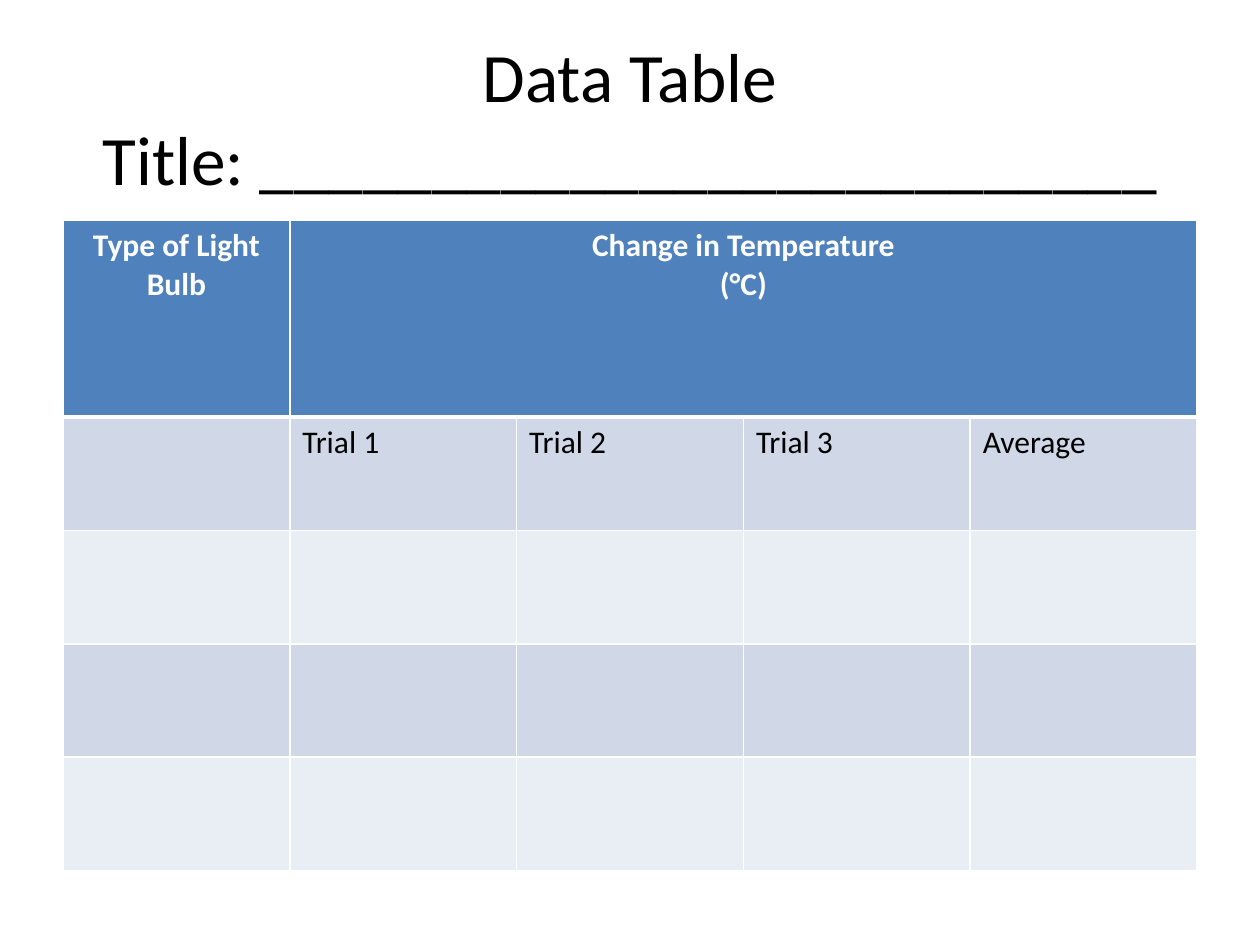
from dataclasses import dataclass

from lxml.etree import SubElement
from pptx import Presentation
from pptx.dml.color import RGBColor
from pptx.enum.text import MSO_ANCHOR as Anchor, PP_ALIGN as Align
from pptx.oxml.ns import qn
from pptx.util import Inches, Pt


@dataclass(frozen=True)
class Theme:
    font: str = "Calibri"
    title_size: float = 39.6
    table_size: float = 18
    ink: str = "000000"
    white: str = "FFFFFF"
    header: str = "4F81BD"
    bands: tuple[str, str] = ("D0D8E8", "E9EDF4")
    rule: float = 1
    header_rule: float = 3


@dataclass(frozen=True)
class Entry:
    row: int
    column: int
    lines: tuple[str, ...]


THEME = Theme()
COLUMNS, COLUMN_WIDTH = 5, 1.8
ROW_HEIGHTS = (1.56, 0.9, 0.9, 0.9, 0.9)
TITLE_LINES = ("Data Table", "Title: " + "_" * 26)
ENTRIES = [
    Entry(0, 0, ("Type of Light Bulb",)),
    Entry(0, 1, ("Change in Temperature", "(°C)")),
    *(Entry(1, column, (label,)) for column, label in
      enumerate(("Trial 1", "Trial 2", "Trial 3", "Average"), start=1)),
]


def add_run(paragraph, text: str, size: float, color: str, bold: bool = False) -> None:
    run = paragraph.add_run()
    run.text = text
    run.font.name = THEME.font
    run.font.size = Pt(size)
    run.font.bold = bold
    run.font.color.rgb = RGBColor.from_string(color)


def add_title(slide) -> None:
    frame = slide.shapes.add_textbox(
        Inches(0.5), Inches(0.3), Inches(9), Inches(1.25)).text_frame
    frame.word_wrap = True
    frame.vertical_anchor = Anchor.MIDDLE
    paragraph = frame.paragraphs[0]
    paragraph.alignment = Align.CENTER
    for index, line in enumerate(TITLE_LINES):
        if index:
            paragraph.add_line_break()
        add_run(paragraph, line, THEME.title_size, THEME.ink)


def style_cell(cell, row: int) -> None:
    # Borders come before the fill in the cell properties
    properties = cell._tc.get_or_add_tcPr()
    widths = dict.fromkeys("LRTB", THEME.rule)
    if row == 0:
        widths["B"] = THEME.header_rule
    elif row == 1:
        widths["T"] = THEME.header_rule
    for side, width in widths.items():
        line = SubElement(properties, qn(f"a:ln{side}"), w=str(Pt(width)))
        fill = SubElement(line, qn("a:solidFill"))
        SubElement(fill, qn("a:srgbClr"), val=THEME.white)
    cell.fill.solid()
    color = THEME.bands[(row - 1) % 2] if row else THEME.header
    cell.fill.fore_color.rgb = RGBColor.from_string(color)


def fill_entry(cell, entry: Entry) -> None:
    is_header = entry.row == 0
    frame = cell.text_frame
    for index, line in enumerate(entry.lines):
        paragraph = frame.add_paragraph() if index else frame.paragraphs[0]
        paragraph.alignment = Align.CENTER if is_header else Align.LEFT
        add_run(paragraph, line, THEME.table_size,
                THEME.white if is_header else THEME.ink, is_header)


def add_trials_table(slide) -> None:
    table = slide.shapes.add_table(
        len(ROW_HEIGHTS), COLUMNS, Inches(0.5), Inches(1.75),
        Inches(COLUMNS * COLUMN_WIDTH), Inches(sum(ROW_HEIGHTS))).table
    for column in table.columns:
        column.width = Inches(COLUMN_WIDTH)
    for row, height in enumerate(ROW_HEIGHTS):
        table.rows[row].height = Inches(height)
        for column in range(COLUMNS):
            style_cell(table.cell(row, column), row)
    table.cell(0, 1).merge(table.cell(0, COLUMNS - 1))
    for entry in ENTRIES:
        fill_entry(table.cell(entry.row, entry.column), entry)


def main() -> None:
    deck = Presentation()
    deck.slide_width, deck.slide_height = Inches(10), Inches(7.5)
    slide = deck.slides.add_slide(deck.slide_layouts[6])
    add_title(slide)
    add_trials_table(slide)
    deck.save("out.pptx")


if __name__ == "__main__":
    main()
